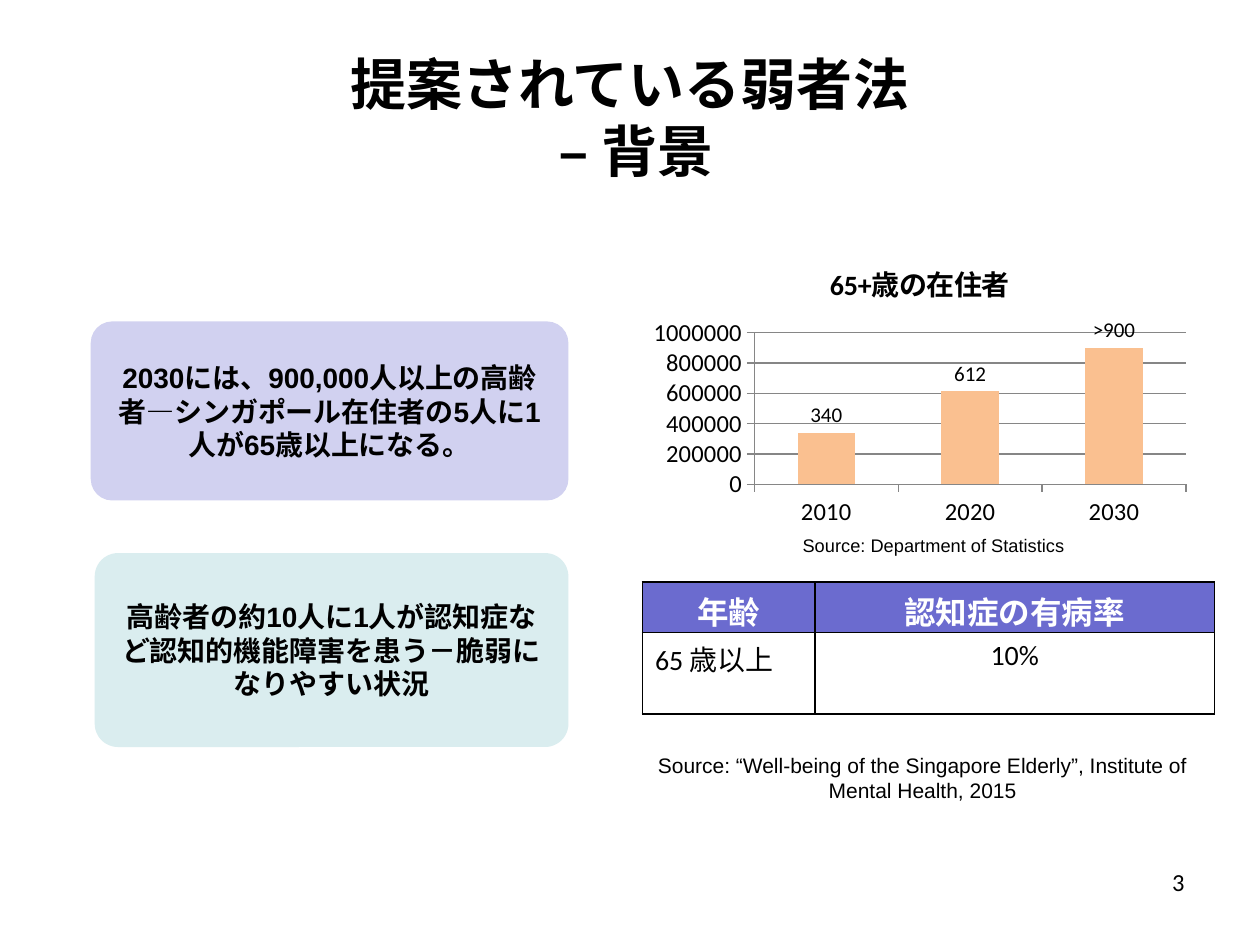
from lxml import etree
from pptx import Presentation
from pptx import util as u
from pptx.chart.data import CategoryChartData
from pptx.dml.color import RGBColor
from pptx.enum import chart as ch, shapes, text
from pptx.oxml import ns

BLACK = RGBColor(0x00, 0x00, 0x00)
WHITE = RGBColor(0xFF, 0xFF, 0xFF)
GRAY = RGBColor(0x86, 0x86, 0x86)
LILAC = RGBColor(0xD1, 0xD1, 0xF0)
MINT = RGBColor(0xDA, 0xED, 0xEF)
VIOLET = RGBColor(0x6B, 0x6B, 0xCF)
ORANGE = RGBColor(0xFA, 0xC0, 0x90)
CENTER = text.PP_ALIGN.CENTER


def style(font, size, name="Calibri", color=BLACK, bold=False):
    font.size = u.Pt(size)
    font.name = name
    font.bold = bold
    font.color.rgb = color


def write(tf, words, size, align=CENTER, **look):
    tf.word_wrap = True
    tf.text = words
    p = tf.paragraphs[0]
    p.alignment = align
    style(p.font, size, **look)
    return p


def place(sp, x, y, w, h):
    sp.left, sp.top, sp.width, sp.height = (u.Cm(v) for v in (x, y, w, h))


def add_title(s, x, y, w, h):
    sp = s.shapes.title
    place(sp, x, y, w, h)
    sp.text_frame.vertical_anchor = text.MSO_ANCHOR.MIDDLE
    write(sp.text_frame, "提案されている弱者法\v – 背景", 32, bold=True)


def add_note(parent, x, y, w, h, words, size, **look):
    sp = parent.shapes.add_textbox(*(u.Cm(v) for v in (x, y, w, h)))
    return write(sp.text_frame, words, size, **look)


def add_card(s, x, y, w, h, words, fill):
    sp = s.shapes.add_shape(shapes.MSO_SHAPE.ROUNDED_RECTANGLE,
                            *(u.Cm(v) for v in (x, y, w, h)))
    sp.adjustments[0] = 0.12
    sp.shadow.inherit = False
    sp.fill.solid()
    sp.fill.fore_color.rgb = fill
    sp.line.fill.background()
    sp.text_frame.vertical_anchor = text.MSO_ANCHOR.MIDDLE
    write(sp.text_frame, words, 16, name="Arial", bold=True)


def add_residents(s, x, y, w, h):
    group = s.shapes.add_group_shape()
    data = CategoryChartData()
    data.categories = ["2010", "2020", "2030"]
    data.add_series("Series 1", (338387, 612200, 900000))
    chart = group.shapes.add_chart(ch.XL_CHART_TYPE.COLUMN_CLUSTERED,
                                   *(u.Cm(v) for v in (x, y, w, h)), data).chart
    style(chart.font, 18)
    chart.has_legend = False
    chart.has_title = True
    tf = chart.chart_title.text_frame
    tf.text = "65+歳の在住者"
    style(tf.paragraphs[0].runs[0].font, 16, bold=True)

    for axis in (chart.category_axis, chart.value_axis):
        style(axis.tick_labels.font, 14)
        axis.major_tick_mark = ch.XL_TICK_MARK.OUTSIDE
        axis.format.line.color.rgb = GRAY
    chart.value_axis.major_gridlines.format.line.color.rgb = GRAY

    plot = chart.plots[0]
    plot.gap_width = 150
    plot.vary_by_categories = False
    series = plot.series[0]
    series.format.fill.solid()
    series.format.fill.fore_color.rgb = ORANGE
    labels = series.data_labels
    labels.show_value = True
    labels.position = ch.XL_LABEL_POSITION.OUTSIDE_END
    style(labels.font, 12)
    for i, words in enumerate(("340", "612", ">900")):
        label = series.points[i].data_label
        label.text_frame.text = words
        style(label.text_frame.paragraphs[0].runs[0].font, 12)
        label.position = ch.XL_LABEL_POSITION.OUTSIDE_END

    p = add_note(group, x + 2.39, y + 5.67, 6.96, 1.14,
                 "Source: Department of Statistics", 18, name="Arial")
    p.runs[0].font._element.set("baseline", "30000")


def add_borders(cell):
    tcPr = cell._tc.get_or_add_tcPr()
    for i, side in enumerate(("lnL", "lnR", "lnT", "lnB")):
        ln = etree.Element(ns.qn("a:" + side), w="12700")
        fill = etree.SubElement(ln, ns.qn("a:solidFill"))
        etree.SubElement(fill, ns.qn("a:srgbClr"), val=str(BLACK))
        tcPr.insert(i, ln)


def add_prevalence(s, x, y, cols, rows):
    table = s.shapes.add_table(len(rows), len(cols), u.Cm(x), u.Cm(y),
                               u.Cm(sum(cols)), u.Cm(sum(rows))).table
    for col, w in zip(table.columns, cols):
        col.width = u.Cm(w)
    for row, h in zip(table.rows, rows):
        row.height = u.Cm(h)
    content = (("年齢", "認知症の有病率"), ("65 歳以上", "10%"))
    for i, line in enumerate(content):
        head = i == 0
        for j, words in enumerate(line):
            cell = table.cell(i, j)
            cell.fill.solid()
            cell.fill.fore_color.rgb = VIOLET if head else WHITE
            add_borders(cell)
            write(cell.text_frame, words, 18 if head else 16,
                  align=CENTER if head or j else text.PP_ALIGN.LEFT,
                  color=WHITE if head else BLACK, bold=head)


def main():
    prs = Presentation()
    prs.slide_width, prs.slide_height = u.Cm(25.4), u.Cm(19.05)
    s = prs.slides.add_slide(prs.slide_layouts[5])
    add_title(s, 1.27, 0.76, 22.86, 3.18)
    add_note(s, 18.21, 17.35, 5.92, 1.32, "3", 14, align=text.PP_ALIGN.RIGHT)
    add_card(s, 1.83, 6.48, 9.63, 3.61,
             "2030には、900,000人以上の高齢者—シンガポール在住者の5人に1人が65歳以上になる。", LILAC)
    add_card(s, 1.91, 11.15, 9.55, 3.91,
             "高齢者の約10人に1人が認知症など認知的機能障害を患う－脆弱になりやすい状況", MINT)
    add_residents(s, 12.95, 4.9, 11.18, 5.84)
    add_prevalence(s, 12.95, 11.73, (3.48, 8.05), (0.99, 1.65))
    add_note(s, 12.95, 15.04, 11.3, 1.27,
             "Source: “Well-being of the Singapore Elderly”, Institute of Mental Health, 2015",
             12, name="Arial")
    prs.save("out.pptx")


if __name__ == "__main__":
    main()
